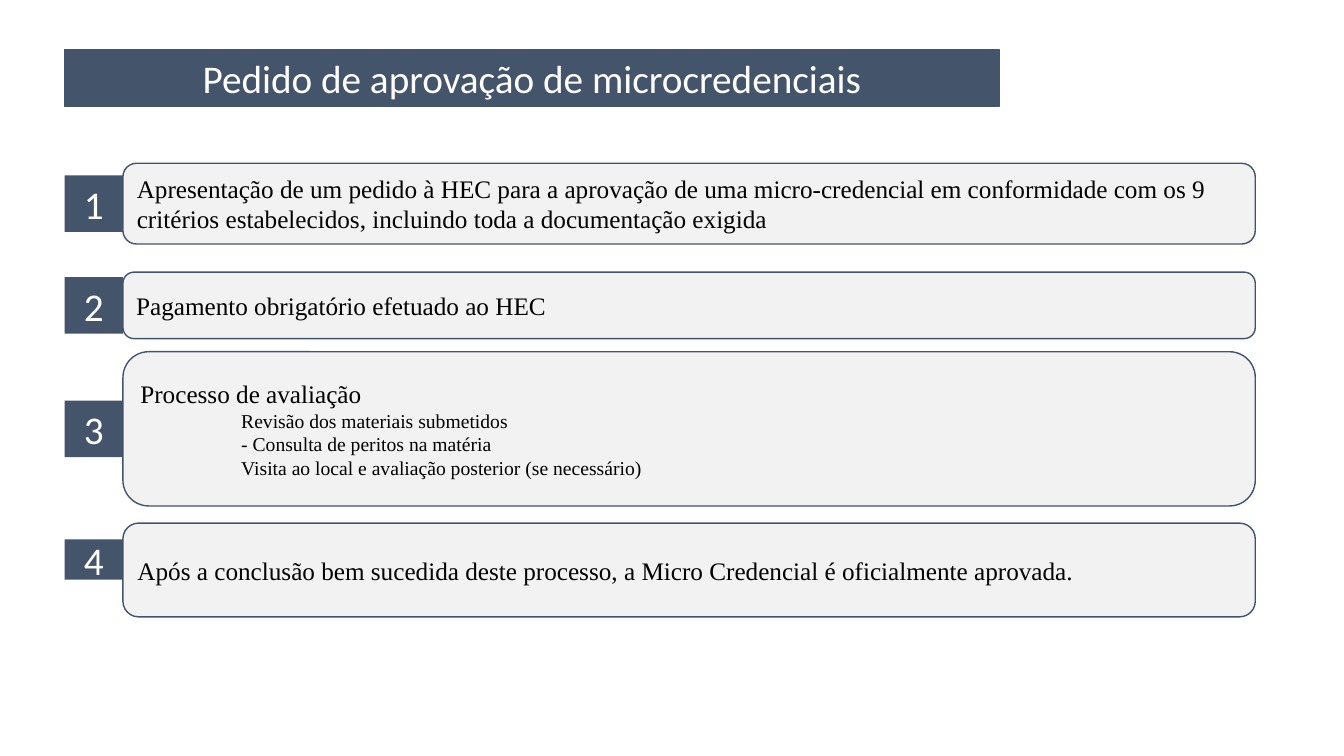
import pptx
import pptx.util
import pptx.dml.color
import pptx.enum.shapes
import pptx.enum.text

SHAPE = pptx.enum.shapes.MSO_SHAPE
ALIGN = pptx.enum.text.PP_ALIGN


def rgb(code):
    """Turn a hex string into a colour."""
    return pptx.dml.color.RGBColor.from_string(code)


def write(frame, text, first=False, size=18, font="Times New Roman",
          color="000000", align=ALIGN.LEFT, indent=0, after=0):
    """Add one formatted paragraph to a text frame."""
    paragraph = frame.paragraphs[0] if first else frame.add_paragraph()
    properties = paragraph._p.get_or_add_pPr()
    properties.set("marL", str(pptx.util.Inches(indent)))
    properties.set("indent", "0")
    paragraph.alignment = align
    paragraph.space_after = pptx.util.Pt(after)
    run = paragraph.add_run()
    run.text = text
    run.font.size = pptx.util.Pt(size)
    run.font.name = font
    run.font.color.rgb = rgb(color)


class StepSlide:
    """Hold the style and the slide; lengths are percentages of its size."""

    navy, pale, white = "44546A", "F2F2F2", "FFFFFF"
    left, badge_width, badge_height, card_width = 4.8, 4.35, 7.47, 84.25

    def __init__(self, deck):
        """Open a blank slide."""
        self.width, self.height = deck.slide_width, deck.slide_height
        self.slide = deck.slides.add_slide(deck.slide_layouts[6])

    def block(self, kind, x, y, width, height, fill, outlined=True):
        """Draw a filled shape and return its text frame."""
        shape = self.slide.shapes.add_shape(
            kind, round(self.width * x / 100), round(self.height * y / 100),
            round(self.width * width / 100), round(self.height * height / 100))
        shape.shadow.inherit = False
        shape.fill.solid()
        shape.fill.fore_color.rgb = rgb(fill)
        if outlined:
            shape.line.color.rgb = rgb(self.navy)
            shape.line.width = pptx.util.Pt(1)
        else:
            shape.line.fill.background()
        frame = shape.text_frame
        frame.word_wrap = True
        frame.vertical_anchor = pptx.enum.text.MSO_ANCHOR.MIDDLE
        return frame

    def label(self, frame, text):
        """Write white centred text."""
        write(frame, text, first=True, size=28, font="Calibri",
              color=self.white, align=ALIGN.CENTER)

    def title(self, text):
        """Draw the title bar."""
        bar = self.block(SHAPE.RECTANGLE, self.left, 6.53, 69.54, 7.6, self.navy)
        self.label(bar, text)

    def step(self, number, top, height, text, details=(),
             badge_height=badge_height, lift=0, **style):
        """Draw a card with its numbered badge."""
        card = self.block(SHAPE.ROUNDED_RECTANGLE, self.left + self.badge_width,
                          top, self.card_width, height, self.pale)
        write(card, text, first=True, **style)
        for detail in details:
            write(card, detail, size=14, indent=1)
        badge_top = top + (height - badge_height) / 2 - lift
        badge = self.block(SHAPE.RECTANGLE, self.left, badge_top,
                           self.badge_width, badge_height, self.navy, outlined=False)
        self.label(badge, str(number))


def main():
    """Build and save the slide."""
    deck = pptx.Presentation()
    deck.slide_width = pptx.util.Inches(13.33)
    deck.slide_height = pptx.util.Inches(7.5)
    page = StepSlide(deck)
    page.title("Pedido de aprovação de microcredenciais")
    steps = [
        dict(top=21.6, height=10.67,
             text="Apresentação de um pedido à HEC para a aprovação de uma "
                  "micro-credencial em conformidade com os 9 critérios "
                  "estabelecidos, incluindo toda a documentação exigida"),
        dict(top=36, height=8.8, text="Pagamento obrigatório efetuado ao HEC"),
        dict(top=46.53, height=20.4, text="Processo de avaliação",
             details=["Revisão dos materiais submetidos",
                      "- Consulta de peritos na matéria",
                      "Visita ao local e avaliação posterior (se necessário)"]),
        dict(top=69.2, height=12.4, badge_height=5.33, lift=1.4,
             align=ALIGN.JUSTIFY, after=8,
             text="Após a conclusão bem sucedida deste processo, a Micro "
                  "Credencial é oficialmente aprovada."),
    ]
    for number, step in enumerate(steps, start=1):
        page.step(number, **step)
    deck.save("out.pptx")


if __name__ == "__main__":
    main()
